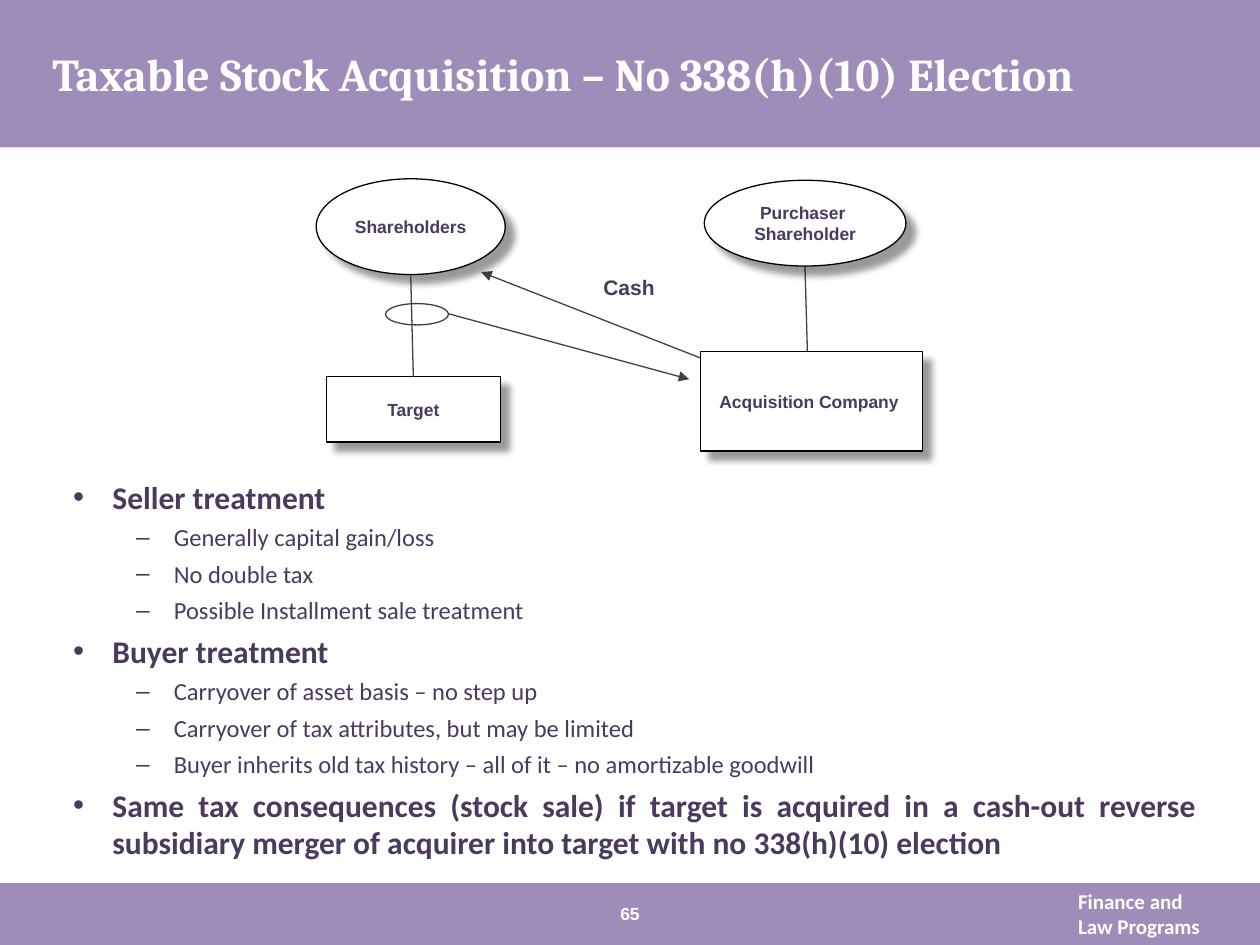
from lxml import etree
from pptx import Presentation
from pptx.dml.color import RGBColor
from pptx.enum import shapes, text
from pptx.oxml import ns
from pptx.util import Pt

HUES = {"band": "9F8DB9", "ink": "493A5E", "white": "FFFFFF",
        "black": "000000", "line": "414042"}
OVAL = shapes.MSO_SHAPE.OVAL
RECT = shapes.MSO_SHAPE.RECTANGLE

POINTS = [
    ("Seller treatment", [
        "Generally capital gain/loss",
        "No double tax",
        "Possible Installment sale treatment"]),
    ("Buyer treatment", [
        "Carryover of asset basis – no step up",
        "Carryover of tax attributes, but may be limited",
        "Buyer inherits old tax history – all of it – no amortizable goodwill"]),
    ("Same tax consequences (stock sale) if target is acquired in a cash-out "
     "reverse subsidiary merger of acquirer into target with no 338(h)(10) "
     "election", []),
]


def hue(name):
    return RGBColor.from_string(HUES[name])


def sub(node, tag, **attrs):
    return etree.SubElement(node, ns.qn(tag), attrs)


def style(para, face, size, color, bold=True):
    font = para.font
    font.name, font.size, font.bold = face, Pt(size), bold
    font.color.rgb = hue(color)


def inset(frame, gap):
    frame.margin_left = frame.margin_right = Pt(gap)
    frame.margin_top = frame.margin_bottom = Pt(gap)


def place(item, box):
    item.left, item.top, item.width, item.height = map(Pt, box)


def band(slide, top, high):
    bar = slide.shapes.add_shape(RECT, 0, Pt(top), Pt(720), Pt(high))
    bar.shadow.inherit = False
    bar.fill.solid()
    bar.fill.fore_color.rgb = hue("band")
    bar.line.fill.background()


def shade(shape):
    shape.shadow.inherit = False
    effects = shape._element.spPr.find(ns.qn("a:effectLst"))
    drop = sub(effects, "a:outerShdw", blurRad=str(Pt(4)), dist=str(Pt(7)),
               dir="2700000", algn="tl", rotWithShape="0")
    tint = sub(drop, "a:srgbClr", val=HUES["black"])
    sub(tint, "a:alpha", val="40000")


def node(slide, kind, box, words):
    shape = slide.shapes.add_shape(kind, *map(Pt, box))
    shape.fill.solid()
    shape.fill.fore_color.rgb = hue("white")
    shape.line.color.rgb = hue("black")
    shape.line.width = Pt(0.75)
    shade(shape)
    frame = shape.text_frame
    inset(frame, 3.6)
    frame.vertical_anchor = text.MSO_ANCHOR.MIDDLE
    frame.text = words
    for para in frame.paragraphs:
        para.alignment = text.PP_ALIGN.CENTER
        style(para, "Arial", 10, "ink")


def ring(slide, box):
    shape = slide.shapes.add_shape(OVAL, *map(Pt, box))
    shape.shadow.inherit = False
    shape.fill.background()
    shape.line.color.rgb = hue("line")
    shape.line.width = Pt(0.75)


def link(slide, start, end, arrow=False):
    wire = slide.shapes.add_connector(
        shapes.MSO_CONNECTOR.STRAIGHT, *map(Pt, start + end))
    wire.line.color.rgb = hue("line")
    wire.line.width = Pt(0.75)
    if arrow:
        sub(wire.line._get_or_add_ln(), "a:tailEnd", type="triangle")
    sub(wire._element.spPr, "a:effectLst")


def label(slide, box, words, face, size, color, wrap=True, mid=False):
    item = slide.shapes.add_textbox(*map(Pt, box))
    frame = item.text_frame
    frame.word_wrap = wrap
    para = frame.paragraphs[0]
    para.text = words
    style(para, face, size, color)
    if mid:
        frame.vertical_anchor = text.MSO_ANCHOR.MIDDLE
        para.alignment = text.PP_ALIGN.CENTER


def holder(slide, item, box):
    slide.shapes._spTree.append(item._element)
    place(item, box)
    frame = item.text_frame
    inset(frame, 0)
    frame.word_wrap = True
    frame.auto_size = text.MSO_AUTO_SIZE.NONE
    return frame


def head(slide):
    frame = holder(slide, slide.shapes.title, (30, 0, 660, 84))
    frame.vertical_anchor = text.MSO_ANCHOR.MIDDLE
    para = frame.paragraphs[0]
    para.text = "Taxable Stock Acquisition – No 338(h)(10) Election"
    para.alignment = text.PP_ALIGN.LEFT
    style(para, "Cambria", 26, "white")


def bullet(para, words, level):
    left, hang, mark, size = [(22.5, 22.5, "•", 18), (57.6, 21.6, "–", 14)][level]
    para.text = words
    para.level = level
    para.space_before, para.space_after = Pt(0), Pt(4)
    props = para._p.get_or_add_pPr()
    props.set("marL", str(Pt(left)))
    props.set("indent", str(-Pt(hang)))
    sub(sub(props, "a:buClr"), "a:srgbClr", val=HUES["ink"])
    sub(props, "a:buChar", char=mark)
    style(para, "Calibri", size, "ink", level == 0)


def body(slide):
    frame = holder(slide, slide.placeholders[1], (41.76, 272.9, 642.2, 225.4))
    frame.vertical_anchor = text.MSO_ANCHOR.TOP
    rows = [(words, level) for top, subs in POINTS
            for words, level in [(top, 0)] + [(s, 1) for s in subs]]
    for i, (words, level) in enumerate(rows):
        para = frame.add_paragraph() if i else frame.paragraphs[0]
        bullet(para, words, level)
    para.alignment = text.PP_ALIGN.JUSTIFY


def chart(slide):
    link(slide, (407.5, 207.4), (275, 155.5), True)
    link(slide, (460, 152), (461.5, 204.5))
    node(slide, OVAL, (180.7, 102.2, 108, 54.7), "Shareholders")
    node(slide, OVAL, (402.5, 103, 115.2, 49), "Purchaser \nShareholder")
    node(slide, RECT, (186.5, 215.3, 99.4, 37.4), "Target")
    node(slide, RECT, (400.3, 200.9, 126.7, 56.9), "Acquisition Company ")
    link(slide, (234.7, 157), (236.2, 215.3))
    ring(slide, (220.3, 173.5, 36, 12.2))
    link(slide, (256.3, 179.3), (393.8, 216.7), True)
    label(slide, (337.7, 153.4, 43.9, 21.6), "Cash", "Arial", 12, "ink", False)


def main():
    deck = Presentation()
    deck.slide_width, deck.slide_height = Pt(720), Pt(540)
    slide = deck.slides.add_slide(deck.slide_layouts[1])
    band(slide, 0, 84.24)
    band(slide, 504.7, 35.3)
    label(slide, (609, 504, 105, 36), "Finance and \vLaw Programs",
          "Calibri", 12, "white")
    head(slide)
    body(slide)
    chart(slide)
    label(slide, (324, 516.2, 72, 12.2), "65", "Arial", 10, "white", mid=True)
    deck.save("out.pptx")


if __name__ == "__main__":
    main()
